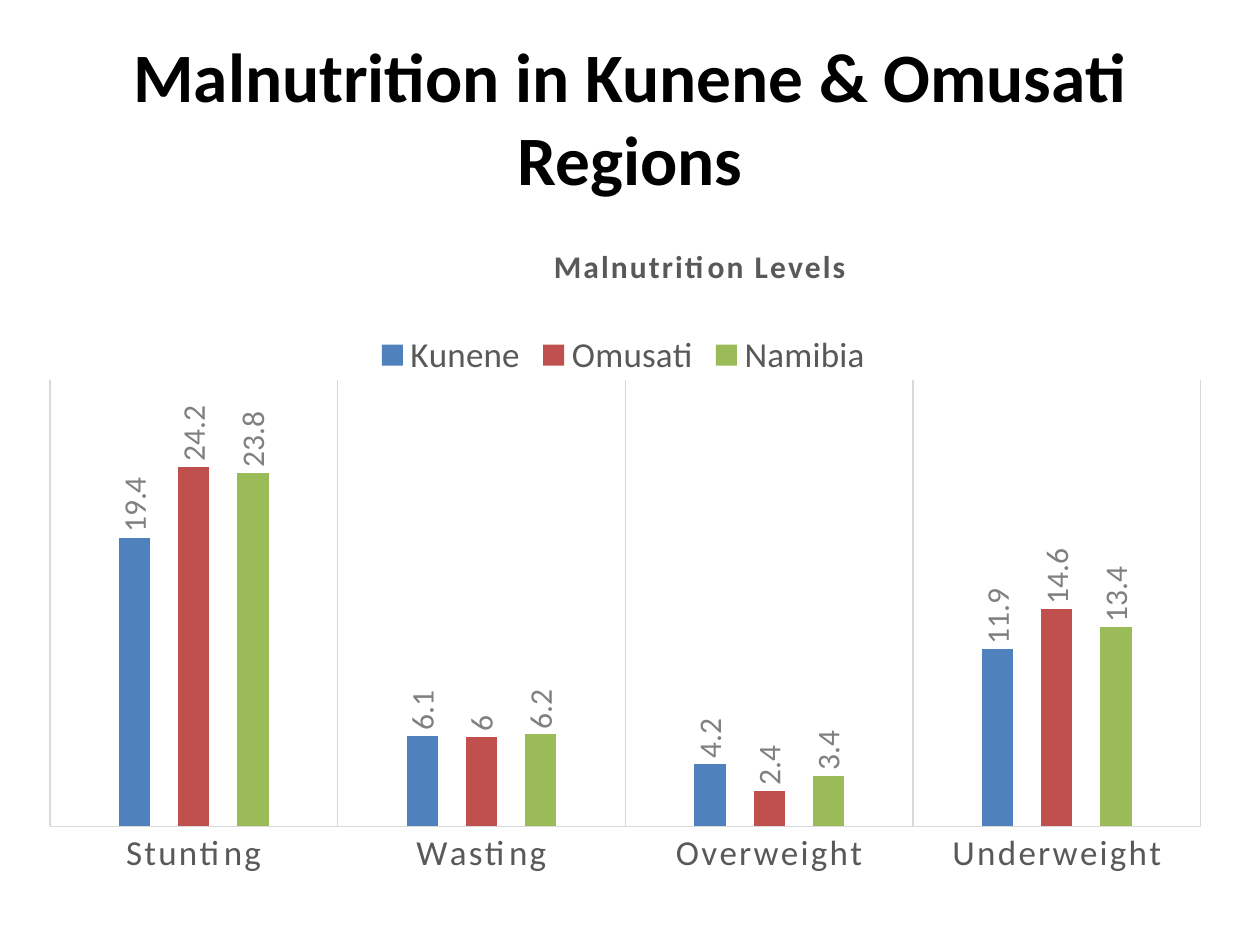
from pptx import Presentation
from pptx.chart.data import CategoryChartData
from pptx.dml.color import RGBColor
from pptx.enum.chart import (XL_CHART_TYPE, XL_LABEL_POSITION,
                             XL_LEGEND_POSITION, XL_TICK_MARK)
from pptx.enum.text import MSO_ANCHOR, PP_ALIGN
from pptx.oxml import parse_xml
from pptx.oxml.ns import nsdecls, qn
from pptx.util import Pt

CLUSTERED = XL_CHART_TYPE.COLUMN_CLUSTERED
OUTSIDE_END = XL_LABEL_POSITION.OUTSIDE_END
LEGEND_TOP = XL_LEGEND_POSITION.TOP
NO_TICK = XL_TICK_MARK.NONE
MIDDLE = MSO_ANCHOR.MIDDLE
CENTER = PP_ALIGN.CENTER

BLACK = RGBColor(0x00, 0x00, 0x00)
DARK_GREY = RGBColor(0x59, 0x59, 0x59)
MID_GREY = RGBColor(0x80, 0x80, 0x80)
LIGHT_GREY = RGBColor(0xD9, 0xD9, 0xD9)
BLUE = RGBColor(0x4F, 0x81, 0xBD)
RED = RGBColor(0xC0, 0x50, 0x4D)
GREEN = RGBColor(0x9B, 0xBB, 0x59)

FONT = "Calibri"
LETTER_SPACING = "120"  # hundredths of a point

INDICATORS = ["Stunting", "Wasting", "Overweight", "Underweight"]
REGIONS = [
    ("Kunene", BLUE, (19.4, 6.1, 4.2, 11.9)),
    ("Omusati", RED, (24.2, 6, 2.4, 14.6)),
    ("Namibia", GREEN, (23.8, 6.2, 3.4, 13.4)),
]


def style_font(font, size, color, bold=False):
    font.name = FONT
    font.size = Pt(size)
    font.bold = bold
    font.color.rgb = color


def style_line(line):
    line.color.rgb = LIGHT_GREY
    line.width = Pt(0.75)


def set_layout(parent, index, inner=False, **fractions):
    """Place a chart part by fractions of the chart's size."""
    for old in parent.findall(qn("c:layout")):
        parent.remove(old)
    target = '<c:layoutTarget val="inner"/>' if inner else ""
    modes = '<c:xMode val="edge"/><c:yMode val="edge"/>'
    sizes = "".join(f'<c:{key} val="{value}"/>' for key, value in fractions.items())
    parent.insert(index, parse_xml(
        f'<c:layout {nsdecls("c")}><c:manualLayout>{target}{modes}{sizes}'
        '</c:manualLayout></c:layout>'))


def add_heading(slide, text):
    box = slide.shapes.add_textbox(Pt(36), Pt(21.6), Pt(648), Pt(90))
    frame = box.text_frame
    frame.word_wrap = True
    frame.vertical_anchor = MIDDLE
    paragraph = frame.paragraphs[0]
    paragraph.alignment = CENTER
    run = paragraph.add_run()
    run.text = text
    style_font(run.font, 39.6, BLACK, bold=True)


def add_chart_title(chart, text):
    title = chart.chart_title
    run = title.text_frame.paragraphs[0].add_run()
    run.text = text
    style_font(run.font, 18, DARK_GREY, bold=True)
    run.font._element.set("spc", LETTER_SPACING)
    set_layout(title._element, 1, x=0.44, y=0.01)
    title.include_in_layout = False


def style_axes(chart):
    category = chart.category_axis
    category.major_tick_mark = category.minor_tick_mark = NO_TICK
    category.has_major_gridlines = True
    style_line(category.major_gridlines.format.line)
    style_line(category.format.line)
    label_font = category.tick_labels.font
    style_font(label_font, 20, DARK_GREY)
    label_font._element.set("spc", LETTER_SPACING)

    value = chart.value_axis
    value.minimum_scale, value.maximum_scale = 0, 30
    value.has_major_gridlines = False
    value.visible = False


def style_series(series, color):
    series.format.fill.solid()
    series.format.fill.fore_color.rgb = color
    series.invert_if_negative = False
    labels = series.data_labels
    labels.show_value = True
    labels.position = OUTSIDE_END
    style_font(labels.font, 18, MID_GREY)
    # Values read upwards
    body = labels._element.find(qn("c:txPr")).find(qn("a:bodyPr"))
    body.set("rot", "-5400000")
    body.set("vert", "horz")


def add_malnutrition_chart(slide):
    data = CategoryChartData()
    data.categories = INDICATORS
    for region, _, levels in REGIONS:
        data.add_series(region, levels)
    chart = slide.shapes.add_chart(
        CLUSTERED, Pt(15), Pt(132.5), Pt(678), Pt(386), data).chart
    style_font(chart.font, 10, BLACK)
    add_chart_title(chart, "Malnutrition Levels")

    # Legend
    chart.has_legend = True
    legend = chart.legend
    legend.position = LEGEND_TOP
    legend.include_in_layout = False
    style_font(legend.font, 20, DARK_GREY)
    set_layout(legend._element, 1, x=0.29, y=0.14)

    # Columns and axes
    plot = chart.plots[0]
    plot.gap_width = 444
    plot.overlap = -90
    plot.vary_by_categories = False
    for series, (_, color, _) in zip(plot.series, REGIONS):
        style_series(series, color)
    style_axes(chart)
    plot_area = chart._chartSpace.chart.plotArea
    set_layout(plot_area, 0, inner=True, x=0.02, y=0.22, w=0.97, h=0.66)


def main():
    deck = Presentation()
    deck.slide_width, deck.slide_height = Pt(720), Pt(540)
    slide = deck.slides.add_slide(deck.slide_layouts[6])
    add_heading(slide, "Malnutrition in Kunene & Omusati Regions")
    add_malnutrition_chart(slide)
    deck.save("out.pptx")


if __name__ == "__main__":
    main()
